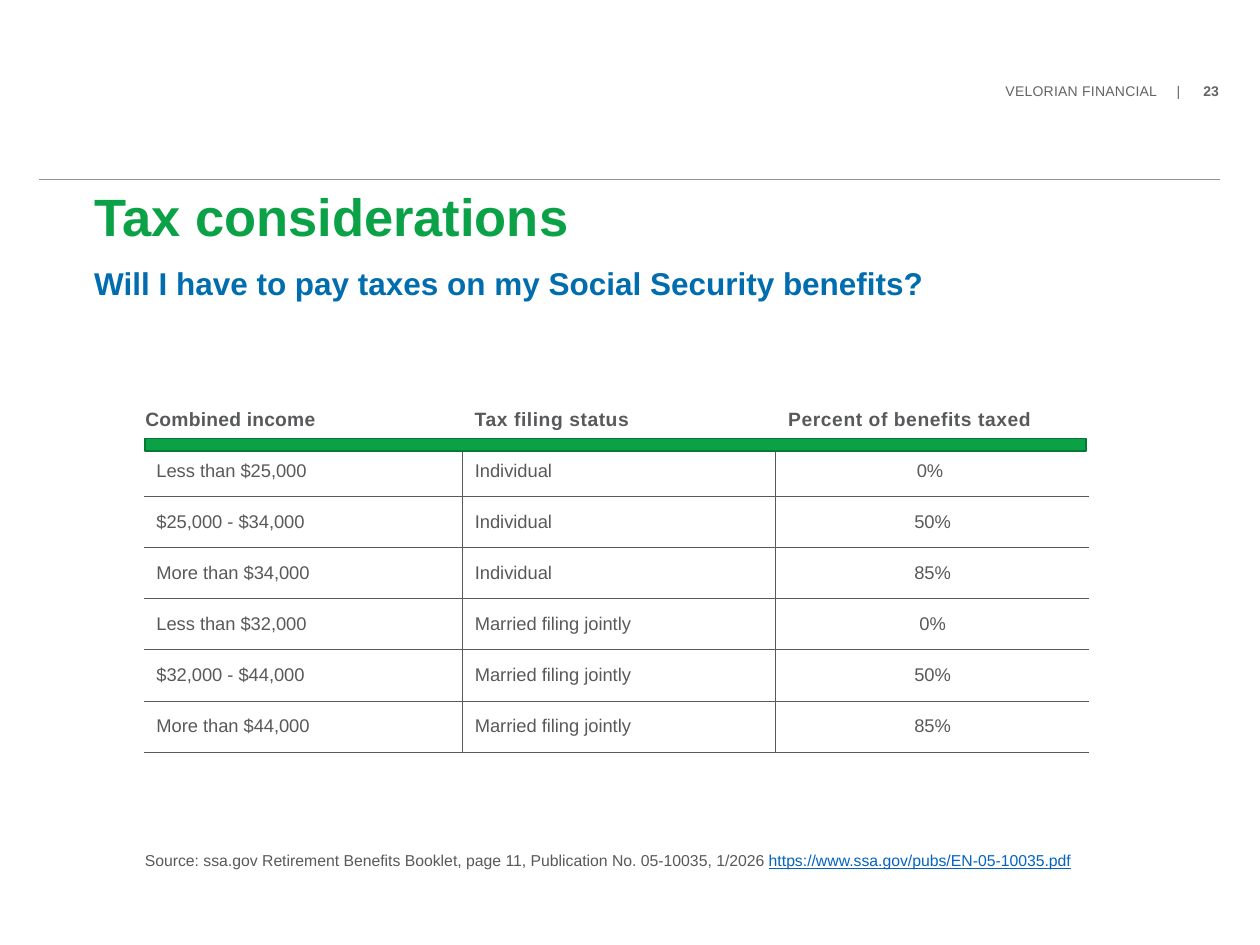
from pptx import Presentation
from pptx.dml.color import RGBColor as RGB
from pptx.enum.shapes import MSO_CONNECTOR as LINK, MSO_SHAPE as SHAPE
from pptx.enum.text import MSO_ANCHOR as ANCHOR, PP_ALIGN as ALIGN
from pptx.oxml import parse_xml
from pptx.oxml.ns import nsdecls, qn
from pptx.util import Cm, Pt
from lxml.etree import SubElement as Sub

GREY, GREEN, BLUE = "58595B", "0AA147", "006DAF"


def tint(color, code):
    color.rgb = RGB.from_string(code)


def write(para, text, code, spc=0, **look):
    run = para.add_run()
    run.text = text
    for key, val in ({"name": "Arial"} | look).items():
        setattr(run.font, key, val)
    tint(run.font.color, code)
    if spc:
        run.font._element.set("spc", str(spc))


deck = Presentation()
deck.slide_width, deck.slide_height = Cm(25.4), Cm(19.05)
slide = deck.slides.add_slide(deck.slide_layouts[6])
shapes = slide.shapes

boxes = {
    "brand": (20.24, 1.63, 4.42, 0.38),
    "title": (1.9, 3.89, 21.59, 2.67),
    "source": (2.92, 17.12, 22, 0.43),
}
paras = {}
for name, box in boxes.items():
    frame = shapes.add_textbox(*map(Cm, box)).text_frame
    frame.word_wrap = True
    for side in ("left", "right", "top", "bottom"):
        setattr(frame, f"margin_{side}", 0)
    if name != "title":
        frame.margin_top = Cm(0.03)
    paras[name] = frame.paragraphs[0]

brand = paras["brand"]
props = brand._p.get_or_add_pPr()
props.set("marL", str(Cm(0.03)))
tabs = Sub(props, qn("a:tabLst"))
for stop in (3.45, 3.99):
    Sub(tabs, qn("a:tab"), pos=str(Cm(stop)), algn="l")
write(brand, "VELORIAN FINANCIAL", "636466", spc=10, size=Pt(8))
write(brand, "\t|\t", "636466", size=Pt(8))
write(brand, "23", "636466", size=Pt(8), bold=True)

rule = shapes.add_connector(LINK.STRAIGHT, Cm(0.79), Cm(3.61), Cm(24.59), Cm(3.61))
rule.line.width = Pt(0.5)
tint(rule.line.color, "929497")
Sub(rule._element.spPr, qn("a:effectLst"))

title = paras["title"]
title.line_spacing = Pt(31)
write(title, "Tax considerations", GREEN, size=Pt(30), bold=True)
title.add_line_break()
write(title, "Will I have to pay taxes on my Social Security benefits?", BLUE, size=Pt(18), bold=True)

rows = [
    ("Combined income", "Tax filing status", "Percent of benefits taxed"),
    ("Less than $25,000", "Individual", "0% "),
    ("$25,000 - $34,000", "Individual", "50%"),
    ("More than $34,000", "Individual", "85%"),
    ("Less than $32,000", "Married filing jointly", "0%"),
    ("$32,000 - $44,000", "Married filing jointly", "50%"),
    ("More than $44,000", "Married filing jointly", "85%"),
]
table = shapes.add_table(7, 3, Cm(2.9), Cm(7.95), Cm(19.06), Cm(7.21)).table
table.first_row = table.horz_banding = False
for col, wide in zip(table.columns, (6.42, 6.32, 6.32)):
    col.width = Cm(wide)
for r, row in enumerate(rows):
    table.rows[r].height = Cm(1.03)
    for c, text in enumerate(row):
        cell = table.cell(r, c)
        cell.vertical_anchor = ANCHOR.MIDDLE
        cell.fill.background()
        para = cell.text_frame.paragraphs[0]
        if r == 0:
            for side in ("left", "right", "top", "bottom"):
                setattr(cell, f"margin_{side}", 0)
            para._p.get_or_add_pPr().set("marL", str(Cm(0.25 if c else 0.03)))
            write(para, text, GREY, spc=30 if c else 10, size=Pt(11), bold=True)
        else:
            para.alignment = ALIGN.CENTER if c == 2 else ALIGN.LEFT
            write(para, text, GREY, size=Pt(10.5), bold=False)
        thin, thick = (GREY, 0.5), ("FFFFFF", 3)
        edges = {
            "L": thin if r and c else None,
            "R": thin if r and c < 2 else None,
            "T": (None, thick)[r] if r < 2 else thin,
            "B": thin if r else thick,
        }
        for i, (side, edge) in enumerate(edges.items()):
            code, width = edge or (None, 0)
            ink = f'<a:solidFill><a:srgbClr val="{code}"/></a:solidFill>' if edge else "<a:noFill/>"
            line = f'<a:ln{side} {nsdecls("a")} w="{Pt(width)}">{ink}</a:ln{side}>'
            cell._tc.get_or_add_tcPr().insert(i, parse_xml(line))

bar = shapes.add_shape(SHAPE.RECTANGLE, Cm(2.92), Cm(8.84), Cm(18.97), Cm(0.25))
bar.shadow.inherit = False
bar.fill.solid()
tint(bar.fill.fore_color, GREEN)
bar.line.width = Pt(1)
tint(bar.line.color, "077735")

source = paras["source"]
write(source, "Source: ssa.gov Retirement Benefits Booklet, page 11, Publication No. 05-10035, 1/2026 ", GREY, size=Pt(9))
write(source, "https://www.ssa.gov/pubs/EN-05-10035.pdf", "0563C1", size=Pt(9), underline=True)

deck.save("out.pptx")
